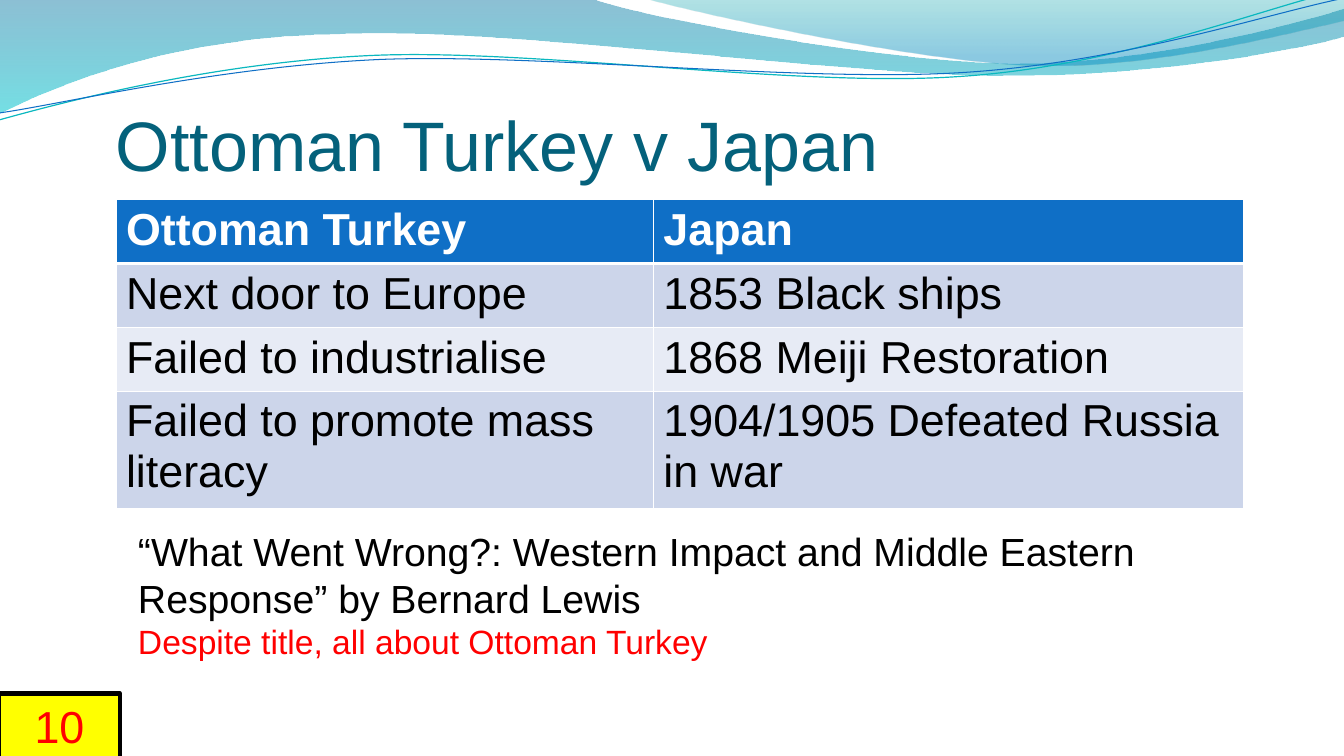
from lxml import etree
from pptx import Presentation
from pptx.dml.color import RGBColor
from pptx.enum.shapes import MSO_SHAPE
from pptx.enum.text import MSO_ANCHOR, PP_ALIGN
from pptx.oxml.ns import qn
from pptx.util import Inches, Pt

RECTANGLE = MSO_SHAPE.RECTANGLE
BOTTOM, MIDDLE = MSO_ANCHOR.BOTTOM, MSO_ANCHOR.MIDDLE
LEFT, CENTER = PP_ALIGN.LEFT, PP_ALIGN.CENTER

WIDTH, HEIGHT = 13.33, 7.5
FONT = "Arial"
COLORS = {
    "title": "04617B", "header": "0F6FC6", "odd": "CCD5EA", "even": "E7EBF5",
    "white": "FFFFFF", "black": "000000", "red": "FF0000", "yellow": "FFFF00",
    "deep": "0074A1", "aqua": "00C6CF", "teal": "00A1A9", "sky": "008BBF",
    "cyan line": "0AB8BF", "blue line": "0F6FC6",
}

TITLE = "Ottoman Turkey v Japan"
COMPARISON = [
    ("Ottoman Turkey", "Japan"),
    ("Next door to Europe", "1853 Black ships"),
    ("Failed to industrialise", "1868 Meiji Restoration"),
    ("Failed to promote mass literacy", "1904/1905 Defeated Russia in war"),
]
COLUMN_WIDTHS = (5.33, 5.85)
MIN_ROW_HEIGHT = 0.41
COMPARISON_HEIGHT = 3.07
READING = [
    ("“What Went Wrong?: Western Impact and Middle Eastern Response” "
     "by Bernard Lewis", 28, "black"),
    ("Despite title, all about Ottoman Turkey", 24, "red"),
]
PAGE = "10"

# Each outline step is a line (2 numbers) or a cubic curve (6 numbers).
# Gradient stops: position, colour, opacity in percent.
BANDS = [
    ([(0, 0), (5.87, -0.01), (6.34, 0.17, 8.85, 0.63, 10.11, 0.63),
      (11.38, 0.63, 12.78, 0.26, 13.33, 0.09), (13.35, 0.36),
      (13.11, 0.44, 11.6, 0.76, 9.94, 0.75),
      (8.29, 0.75, 5.09, 0.28, 3.43, 0.34),
      (1.72, 0.36, 0.61, 0.83, -0.01, 1.13)],
     [(0, "deep", 45), (1, "aqua", 55)]),
    ([(6.39, -0.01), (6.79, 0.11, 9.09, 0.62, 10.25, 0.65),
      (11.41, 0.69, 12.82, 0.32, 13.33, 0.21), (13.33, 0)],
     [(0, "teal", 30), (0.8, "sky", 45)]),
]
RIPPLES = [
    ([(-0.01, 1.19), (0.64, 1.01, 2.11, 0.62, 3.69, 0.55),
      (5.27, 0.48, 7.9, 0.87, 9.5, 0.76),
      (11.1, 0.66, 12.52, 0.08, 13.31, -0.1)], "cyan line", 0.85),
    ([(0, 1.12), (0.63, 1.03, 2.18, 0.66, 3.78, 0.59),
      (5.37, 0.53, 7.96, 0.82, 9.55, 0.72),
      (11.15, 0.62, 12.55, 0.14, 13.34, -0.02)], "blue line", 0.75),
]


def rgb(name):
    return RGBColor.from_string(COLORS[name])


def add_outline(slide, steps, close):
    """Draw straight segments through all points, then merge them into curves."""
    points = [tuple(map(Inches, step[i:i + 2]))
              for step in steps for i in range(0, len(step), 2)]
    builder = slide.shapes.build_freeform(*points[0])
    builder.add_line_segments(points[1:], close=close)
    outline = builder.convert_to_shape()
    outline.shadow.inherit = False

    segments = iter(list(outline._element.spPr.iter(qn("a:lnTo"))))
    for step in steps[1:]:
        segment = next(segments)
        if len(step) == 6:
            segment.tag = qn("a:cubicBezTo")
            for _ in range(2):
                merged = next(segments)
                segment.append(merged[0])
                merged.getparent().remove(merged)
    return outline


def add_band(slide, steps, stops):
    band = add_outline(slide, steps, True)
    band.line.fill.background()
    band.fill.gradient()
    band.fill.gradient_angle = 270
    for stop, (position, color, _) in zip(band.fill.gradient_stops, stops):
        stop.position = position
        stop.color.rgb = rgb(color)
    tints = band._element.spPr.iter(qn("a:srgbClr"))
    for tint, (_, _, opacity) in zip(tints, stops):
        etree.SubElement(tint, qn("a:alpha")).set("val", str(opacity * 1000))


def add_ripple(slide, steps, color, weight):
    ripple = add_outline(slide, steps, False)
    ripple.fill.background()
    ripple.line.color.rgb = rgb(color)
    ripple.line.width = Pt(weight)


def write(paragraph, words, size, color, bold=False, align=LEFT):
    paragraph.alignment = align
    run = paragraph.add_run()
    run.text = words
    run.font.name = FONT
    run.font.size = Pt(size)
    run.font.bold = bold
    run.font.color.rgb = rgb(color)


def add_text_frame(slide, *box):
    frame = slide.shapes.add_textbox(*map(Inches, box)).text_frame
    frame.word_wrap = True
    return frame


def set_borders(cell, row):
    weights = {"L": 1, "R": 1, "T": 3 if row == 1 else 1,
               "B": 3 if row == 0 else 1}
    properties = cell._tc.get_or_add_tcPr()
    for side, weight in weights.items():
        border = etree.SubElement(properties, qn("a:ln" + side))
        border.set("w", str(Pt(weight)))
        fill = etree.SubElement(border, qn("a:solidFill"))
        etree.SubElement(fill, qn("a:srgbClr")).set("val", COLORS["white"])


def add_comparison(slide, left, top):
    holder = slide.shapes.add_table(
        len(COMPARISON), len(COLUMN_WIDTHS), Inches(left), Inches(top),
        Inches(sum(COLUMN_WIDTHS)), Inches(MIN_ROW_HEIGHT * len(COMPARISON)))
    table = holder.table
    for column, width in zip(table.columns, COLUMN_WIDTHS):
        column.width = Inches(width)
    for r, entries in enumerate(COMPARISON):
        is_header = r == 0
        shade = "header" if is_header else "odd" if r % 2 else "even"
        for c, entry in enumerate(entries):
            cell = table.cell(r, c)
            set_borders(cell, r)
            cell.fill.solid()
            cell.fill.fore_color.rgb = rgb(shade)
            write(cell.text_frame.paragraphs[0], entry, 32,
                  "white" if is_header else "black", bold=is_header)
    holder.height = Inches(COMPARISON_HEIGHT)


def add_page_tag(slide):
    tag = slide.shapes.add_shape(
        RECTANGLE, *map(Inches, (-0.01, 6.88, 1.2, 0.64)))
    tag.shadow.inherit = False
    tag.fill.solid()
    tag.fill.fore_color.rgb = rgb("yellow")
    tag.line.color.rgb = rgb("black")
    tag.line.width = Pt(3)
    tag.text_frame.vertical_anchor = MIDDLE
    write(tag.text_frame.paragraphs[0], PAGE, 32, "red", align=CENTER)


def main():
    deck = Presentation()
    deck.slide_width, deck.slide_height = Inches(WIDTH), Inches(HEIGHT)
    slide = deck.slides.add_slide(deck.slide_layouts[6])

    for band in BANDS:
        add_band(slide, *band)
    for ripple in RIPPLES:
        add_ripple(slide, *ripple)

    heading = add_text_frame(slide, 1.15, 0.95, 11.02, 0.89)
    heading.margin_left = heading.margin_right = heading.margin_bottom = 0
    heading.vertical_anchor = BOTTOM
    write(heading.paragraphs[0], TITLE, 50, "title")

    add_comparison(slide, 1.15, 1.98)

    reading = add_text_frame(slide, 1.27, 5.18, 11.18, 1.45)
    for i, line in enumerate(READING):
        write(reading.add_paragraph() if i else reading.paragraphs[0], *line)

    add_page_tag(slide)
    deck.save("out.pptx")


if __name__ == "__main__":
    main()
